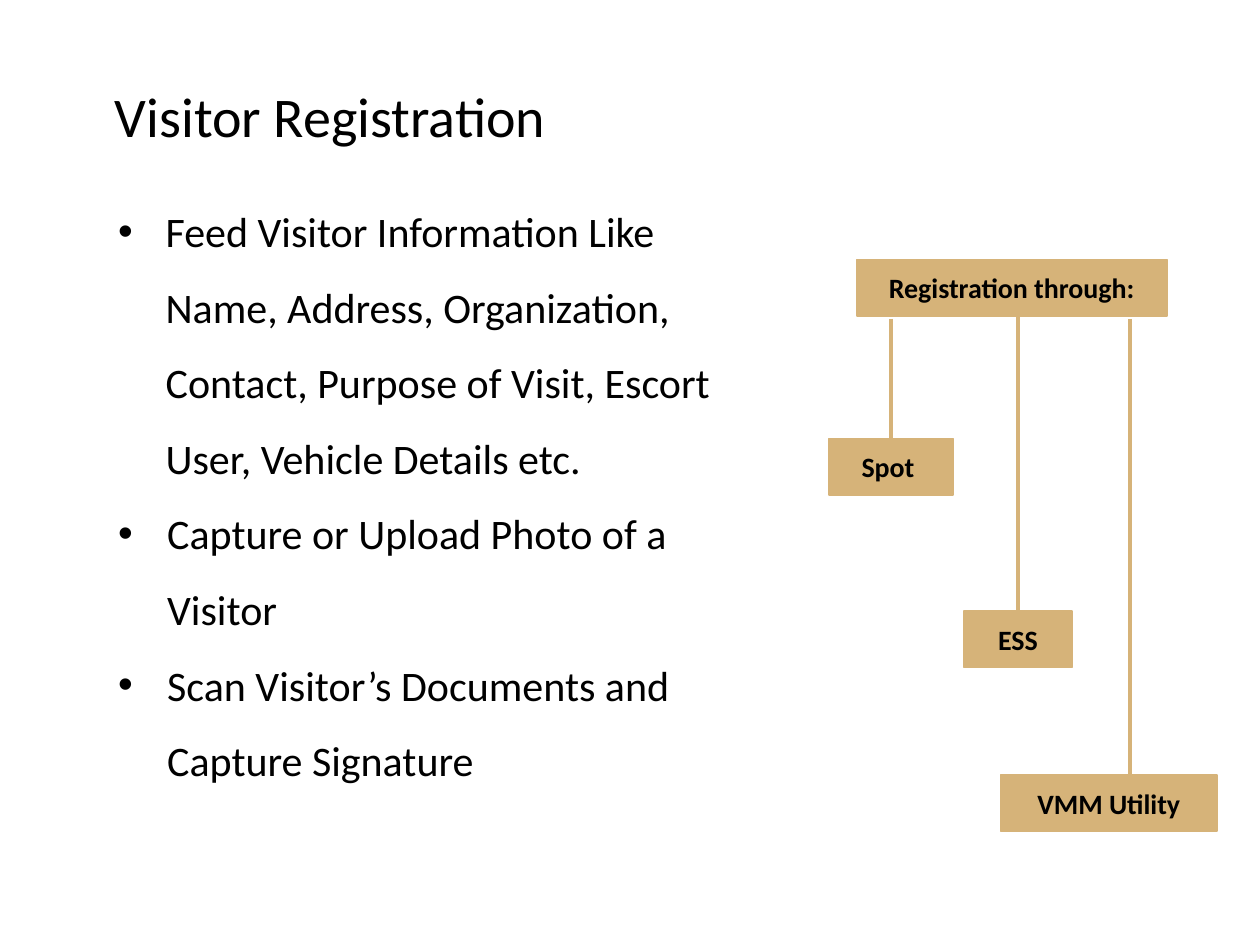
from lxml.etree import SubElement
from pptx import Presentation
from pptx.dml.color import RGBColor
from pptx.enum.shapes import MSO_CONNECTOR as Connector, MSO_SHAPE as Shape
from pptx.enum.text import MSO_ANCHOR as Anchor, PP_ALIGN as Align
from pptx.oxml.ns import qn
from pptx.util import Cm, Pt

COLORS = {"text": "000000", "tan": "D6B379"}
FONT = "Calibri"
BOX_HEIGHT = 1.14

BULLETS = [
    ("Feed Visitor Information Like Name, Address, Organization, "
     "Contact, Purpose of Visit, Escort User, Vehicle Details etc.", 0.96),
    ("Capture or Upload Photo of a Visitor", 0.99),
    ("Scan Visitor’s Documents and Capture Signature", 0.99),
]
CHANNELS = [
    ("Spot ", 16.71, 8.84, 2.51),
    ("ESS", 19.43, 12.32, 2.18),
    ("VMM Utility", 20.17, 15.62, 4.37),
]
LINE_STARTS = [(None, 6.43), (None, 6.27), (22.78, 6.43)]


def color(name):
    return RGBColor.from_string(COLORS[name])


def write(para, text, *, size, bold=False, align=Align.LEFT, spacing=None):
    para.alignment = align
    if spacing:
        para.line_spacing = spacing
    span = para.add_run()
    span.text = text
    span.font.name = FONT
    span.font.size = Pt(size)
    span.font.bold = bold
    span.font.color.rgb = color("text")


def set_bullet(para, indent):
    props = para._p.get_or_add_pPr()
    props.set("marL", str(Cm(indent)))
    props.set("indent", str(-Cm(indent)))
    SubElement(props, qn("a:buFont")).set("typeface", "Arial")
    SubElement(props, qn("a:buChar")).set("char", "•")


def format_title(page, text):
    title = page.shapes.title
    title.left, title.top = Cm(2.06), Cm(1.52)
    title.width, title.height = Cm(17.58), Cm(1.63)
    title.text_frame.vertical_anchor = Anchor.TOP
    write(title.text_frame.paragraphs[0], text, size=32)


def add_bullets(page, items):
    frame = page.shapes.add_textbox(Cm(2.13), Cm(3.51), Cm(13.11), Cm(7.92)).text_frame
    frame.word_wrap = True
    for number, (text, indent) in enumerate(items):
        para = frame.add_paragraph() if number else frame.paragraphs[0]
        set_bullet(para, indent)
        write(para, text, size=24, spacing=1.5)


def add_box(page, text, left, top, width):
    box = page.shapes.add_shape(
        Shape.RECTANGLE, Cm(left), Cm(top), Cm(width), Cm(BOX_HEIGHT))
    box.shadow.inherit = False
    box.fill.solid()
    box.fill.fore_color.rgb = color("tan")
    box.line.color.rgb = color("tan")
    box.line.width = Pt(1)
    box.text_frame.vertical_anchor = Anchor.MIDDLE
    write(box.text_frame.paragraphs[0], text, size=16, bold=True, align=Align.CENTER)
    return box


def add_drop_line(page, box, x, top):
    center = box.left + box.width // 2
    line_x = Cm(x) if x else center
    line = page.shapes.add_connector(
        Connector.STRAIGHT, line_x, Cm(top), line_x, box.top)
    if line_x == center:
        line.end_connect(box, 0)
    line.line.color.rgb = color("tan")
    line.line.width = Pt(2)
    SubElement(line._element.spPr, qn("a:effectLst"))


def main():
    deck = Presentation()
    deck.slide_width, deck.slide_height = Cm(25.4), Cm(19.05)
    page = deck.slides.add_slide(deck.slide_layouts[5])
    format_title(page, "Visitor Registration")
    add_bullets(page, BULLETS)
    add_box(page, "Registration through:", 17.27, 5.23, 6.25)
    boxes = [add_box(page, *channel) for channel in CHANNELS]
    for box, (x, top) in zip(boxes, LINE_STARTS):
        add_drop_line(page, box, x, top)
    deck.save("out.pptx")


if __name__ == "__main__":
    main()
